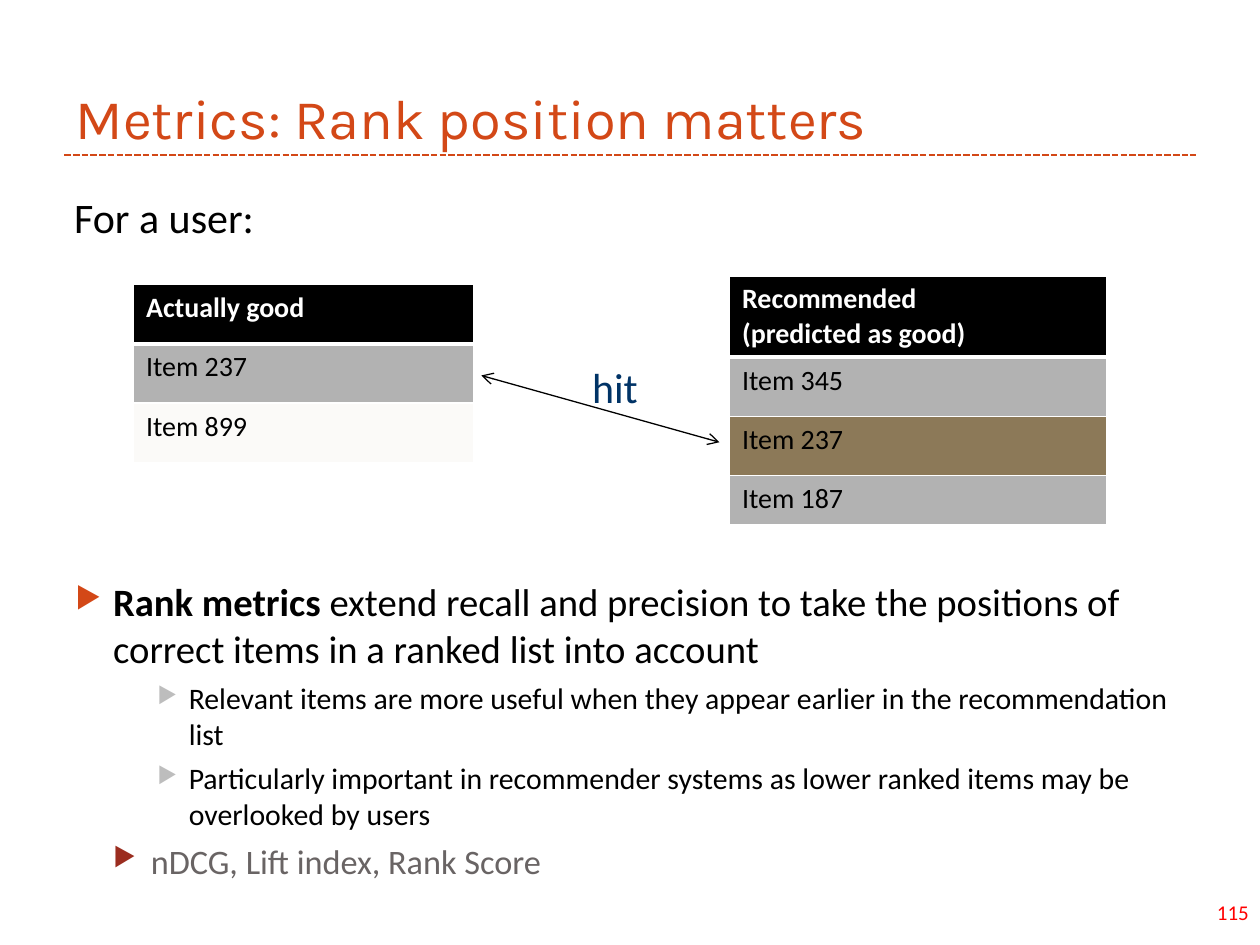
from lxml.etree import SubElement
from pptx import Presentation
from pptx.dml.color import RGBColor
from pptx.enum.dml import MSO_LINE
from pptx.enum.shapes import MSO_CONNECTOR
from pptx.enum.text import MSO_ANCHOR, MSO_AUTO_SIZE, PP_ALIGN
from pptx.oxml.ns import qn
from pptx.util import Inches, Pt


def color(value):
    return RGBColor.from_string(value)


def style(paragraph, size, value, font="Calibri", bold=False):
    paragraph.font.name = font
    paragraph.font.size = Pt(size)
    paragraph.font.bold = bold
    paragraph.font.color.rgb = color(value)


prs = Presentation()
prs.slide_width, prs.slide_height = Inches(10), Inches(7.5)
slide = prs.slides.add_slide(prs.slide_layouts[5])
shapes = slide.shapes

# Title
title = shapes.title
title.left, title.top = Inches(0.5), Inches(0.17)
title.width, title.height = Inches(9), Inches(1.08)
title.text_frame.text = "Metrics: Rank position matters"
title.text_frame.auto_size = MSO_AUTO_SIZE.NONE
title.text_frame.vertical_anchor = MSO_ANCHOR.BOTTOM
title.text_frame.paragraphs[0].alignment = PP_ALIGN.LEFT
style(title.text_frame.paragraphs[0], 32, "D34817", "Karla")

# Title rule and hit arrow
rule = shapes.add_connector(MSO_CONNECTOR.STRAIGHT, Inches(0.51), Inches(1.23), Inches(9.49), Inches(1.23))
rule.line.color.rgb = color("D34817")
rule.line.width = Pt(1.25)
rule.line.dash_style = MSO_LINE.SQUARE_DOT
hit_arrow = shapes.add_connector(MSO_CONNECTOR.STRAIGHT, Inches(3.82), Inches(2.98), Inches(5.71), Inches(3.51))
hit_arrow.line.color.rgb = color("000000")
hit_arrow.line.width = Pt(0.75)
for end in ("a:headEnd", "a:tailEnd"):
    SubElement(hit_arrow.line._get_or_add_ln(), qn(end), type="arrow")
for connector in (rule, hit_arrow):
    SubElement(connector._element.spPr, qn("a:effectLst"))

# Item lists: left, top, width, row heights, rows of (text, fill)
item_lists = [
    (1.06, 2.26, 2.7, [0.47] * 3,
     [("Actually good", "000000"), ("Item 237", "B2B2B2"), ("Item 899", "FBFAF8")]),
    (5.79, 2.19, 2.99, [0.64, 0.47, 0.47, 0.39],
     [("Recommended\n(predicted as good)", "000000"), ("Item 345", "B2B2B2"),
      ("Item 237", "8C7958"), ("Item 187", "B2B2B2")]),
]
for left, top, width, heights, rows in item_lists:
    table = shapes.add_table(len(rows), 1, Inches(left), Inches(top), Inches(width), Inches(sum(heights))).table
    for index, (text, fill) in enumerate(rows):
        table.rows[index].height = Inches(heights[index])
        cell = table.cell(index, 0)
        cell.text = text
        for paragraph in cell.text_frame.paragraphs:
            style(paragraph, 16, "000000" if index else "FFFFFF", bold=index == 0)
        # The line below the header row is thicker
        thick_side = {0: "B", 1: "T"}.get(index)
        for side in "LRTB":
            border = SubElement(cell._tc.get_or_add_tcPr(), qn("a:ln" + side),
                                w=str(Pt(3 if side == thick_side else 1)))
            SubElement(SubElement(border, qn("a:solidFill")), qn("a:srgbClr"), val="FFFFFF")
        cell.fill.solid()
        cell.fill.fore_color.rgb = color(fill)

# Labels and slide number
labels = [
    ("For a user:", 0.49, 1.47, 1.67, 0.5, 24, "000000", PP_ALIGN.LEFT),
    ("hit", 4.6, 2.82, 0.58, 0.5, 24, "003366", PP_ALIGN.LEFT),
    ("115", 8.73, 7.09, 1.28, 0.3, 12, "FF0000", PP_ALIGN.RIGHT),
]
for text, left, top, width, height, size, value, align in labels:
    label = shapes.add_textbox(Inches(left), Inches(top), Inches(width), Inches(height)).text_frame
    label.text = text
    label.word_wrap = align == PP_ALIGN.RIGHT
    label.paragraphs[0].alignment = align
    style(label.paragraphs[0], size, value)

# Explanation: bold lead, text, level, indent, hanging, space before, size, colour, bullet colour
points = [
    ("Rank metrics", " extend recall and precision to take the positions of correct items "
     "in a ranked list into account", 0, 0.3, 0.3, 0, 22.1, "000000", "D34817"),
    ("", "Relevant items are more useful when they appear earlier in the recommendation list",
     2, 0.9, 0.25, 5, 17, "000000", "BDBDBD"),
    ("", "Particularly important in recommender systems as lower ranked items may be "
     "overlooked by users", 2, 0.9, 0.25, 5, 17, "000000", "BDBDBD"),
    ("", "nDCG, Lift index, Rank Score", 1, 0.6, 0.3, 5, 19.6, "696464", "9B2D1F"),
]
body = shapes.add_textbox(Inches(0.5), Inches(4.54), Inches(9), Inches(2.08)).text_frame
body.word_wrap = True
for index, (lead, text, level, indent, hanging, before, size, value, bullet) in enumerate(points):
    paragraph = body.add_paragraph() if index else body.paragraphs[0]
    paragraph.level = level
    paragraph.space_before = Pt(before)
    props = paragraph._p.get_or_add_pPr()
    props.set("marL", str(Inches(indent)))
    props.set("indent", str(-Inches(hanging)))
    SubElement(SubElement(props, qn("a:buClr")), qn("a:srgbClr"), val=bullet)
    SubElement(props, qn("a:buSzPct"), val="76000")
    SubElement(props, qn("a:buChar"), char="▶")
    style(paragraph, size, value)
    if lead:
        lead_run = paragraph.add_run()
        lead_run.text = lead
        lead_run.font.bold = True
    paragraph.add_run().text = text

prs.save("out.pptx")
